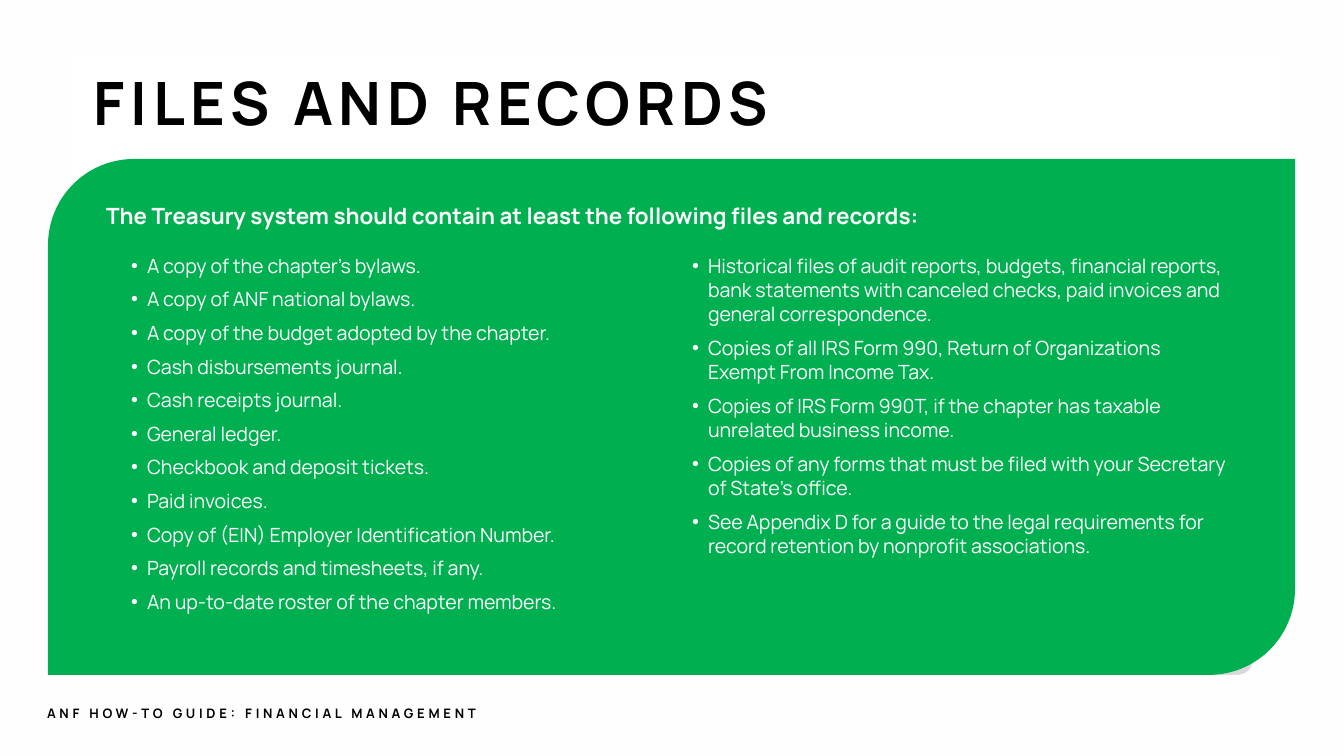
from dataclasses import dataclass

from lxml.etree import SubElement
from pptx import Presentation
from pptx.dml.color import RGBColor
from pptx.enum.shapes import MSO_SHAPE as Preset
from pptx.enum.text import MSO_ANCHOR as Anchor, MSO_AUTO_SIZE as AutoSize, PP_ALIGN as Align
from pptx.oxml.ns import qn
from pptx.util import Emu, Pt

EMU_PER_PX = 914400 / 134.4
TWO_CONTENT_LAYOUT = 3


@dataclass(frozen=True)
class Theme:
    font: str = "Manrope"
    background: str = "FFFEFF"
    white: str = "FFFFFF"
    black: str = "000000"
    green: str = "00B050"
    gray: str = "D9D9D9"
    title_size: float = 32
    heading_size: float = 12
    list_size: float = 10.5
    footer_size: float = 7


THEME = Theme()

LEFT_RECORDS = [
    "A copy of the chapter’s bylaws.",
    "A copy of ANF national bylaws.",
    "A copy of the budget adopted by the chapter.",
    "Cash disbursements journal.",
    "Cash receipts journal.",
    "General ledger.",
    "Checkbook and deposit tickets.",
    "Paid invoices.",
    "Copy of (EIN) Employer Identification Number.",
    "Payroll records and timesheets, if any.",
    "An up-to-date roster of the chapter members.",
]
RIGHT_RECORDS = [
    "Historical files of audit reports, budgets, financial reports, bank statements "
    "with canceled checks, paid invoices and general correspondence.",
    "Copies of all IRS Form 990, Return of Organizations Exempt From Income Tax.",
    "Copies of IRS Form 990T, if the chapter has taxable unrelated business income.",
    "Copies of any forms that must be filed with your Secretary of State’s office.",
    "See Appendix D for a guide to the legal requirements for record retention "
    "by nonprofit associations.",
]


def px(value):
    return Emu(round(value * EMU_PER_PX))


def place(shape, left, top, width, height):
    shape.left, shape.top = px(left), px(top)
    shape.width, shape.height = px(width), px(height)


def add_panel(slide, preset, box, color):
    shape = slide.shapes.add_shape(preset, *map(px, box))
    shape.shadow.inherit = False
    shape.fill.solid()
    shape.fill.fore_color.rgb = RGBColor.from_string(color)
    shape.line.fill.background()
    return shape


def set_frame(shape, insets=(13, 7, 13, 7), anchor=Anchor.TOP):
    """Fix wrapping, insets (left, top, right, bottom) and anchor; return the frame."""
    frame = shape.text_frame
    frame.word_wrap = True
    frame.auto_size = AutoSize.NONE
    frame.vertical_anchor = anchor
    (frame.margin_left, frame.margin_top,
     frame.margin_right, frame.margin_bottom) = map(px, insets)
    return frame


def write(paragraph, text, *, size, color, bold=False, tracking=0, line=None, after=0):
    """Write one run; tracking, line and after are in points."""
    paragraph.alignment = Align.LEFT
    paragraph.space_before = Pt(0)
    paragraph.space_after = Pt(after)
    if line:
        paragraph.line_spacing = Pt(line)
    run = paragraph.add_run()
    run.text = text
    run.font.name = THEME.font
    run.font.size = Pt(size)
    run.font.bold = bold
    run.font.color.rgb = RGBColor.from_string(color)
    if tracking:
        run._r.get_or_add_rPr().set("spc", str(tracking * 100))


def add_bullet(paragraph, indent, hanging):
    properties = paragraph._p.get_or_add_pPr()
    properties.set("marL", str(px(indent)))
    properties.set("indent", str(-px(hanging)))
    SubElement(properties, qn("a:buChar")).set("char", "•")


def fill_list(placeholder, items, box):
    place(placeholder, *box)
    frame = set_frame(placeholder, insets=(0, 0, 0, 0))
    for index, item in enumerate(items):
        paragraph = frame.add_paragraph() if index else frame.paragraphs[0]
        add_bullet(paragraph, indent=34, hanging=16)
        write(paragraph, item, size=THEME.list_size, color=THEME.white, line=13, after=5)


def add_label(slide, text, box, **text_format):
    label = slide.shapes.add_textbox(*map(px, box))
    write(set_frame(label).paragraphs[0], text, **text_format)


def fill_title(title, text):
    place(title, 67, 0, 741, 206)
    frame = set_frame(title, insets=(27, 13, 7, 7), anchor=Anchor.MIDDLE)
    write(frame.paragraphs[0], text, size=THEME.title_size, color=THEME.black,
          bold=True, tracking=3, line=34)


def bring_to_front(slide, shape):
    slide.shapes._spTree.append(shape._element)


def main():
    presentation = Presentation()
    presentation.slide_width, presentation.slide_height = px(1344), px(756)
    slide = presentation.slides.add_slide(presentation.slide_layouts[TWO_CONTENT_LAYOUT])
    slide.background.fill.solid()
    slide.background.fill.fore_color.rgb = RGBColor.from_string(THEME.background)
    title, left_list, right_list = slide.placeholders

    add_panel(slide, Preset.RECTANGLE, (66, 56, 1214, 595), THEME.white)
    add_panel(slide, Preset.ROUND_2_DIAG_RECTANGLE, (929, 581, 324, 94), THEME.gray)
    add_panel(slide, Preset.ROUND_2_DIAG_RECTANGLE, (48, 159, 1247, 516), THEME.green)

    fill_title(title, "FILES AND RECORDS")
    add_label(slide, "The Treasury system should contain at least the following files and records:",
              (93, 195, 1156, 46), size=THEME.heading_size, color=THEME.white, bold=True)
    for column, (placeholder, items) in enumerate(
            [(left_list, LEFT_RECORDS), (right_list, RIGHT_RECORDS)]):
        fill_list(placeholder, items, (113 + column * 561, 253, 554, 395))
    add_label(slide, "ANF HOW-TO GUIDE: FINANCIAL MANAGEMENT", (34, 699, 569, 27),
              size=THEME.footer_size, color=THEME.black, bold=True, tracking=2)

    for placeholder in (title, left_list, right_list):
        bring_to_front(slide, placeholder)
    presentation.save("out.pptx")


if __name__ == "__main__":
    main()
